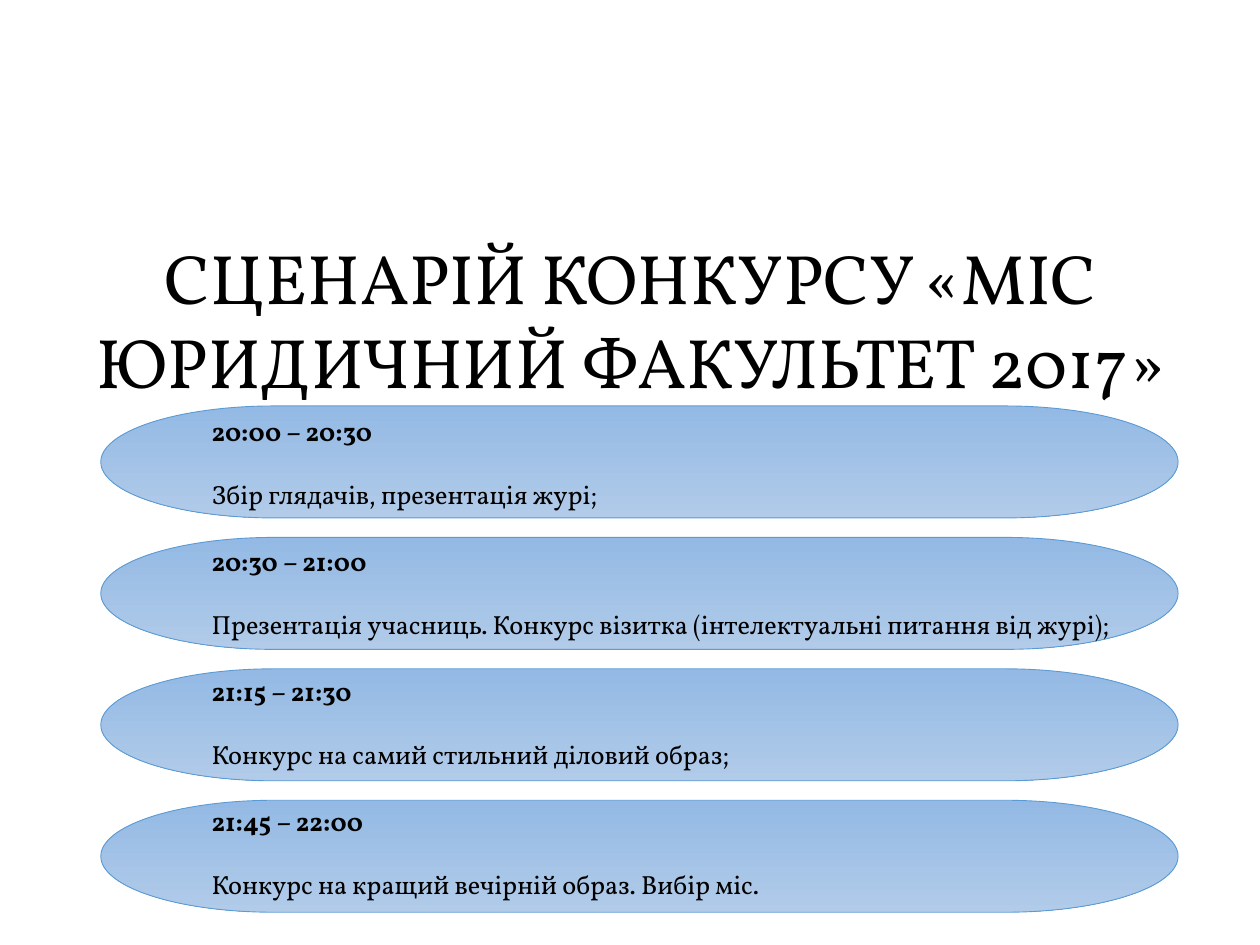
import pptx
import pptx.util
import pptx.dml.color
import pptx.enum.shapes
import pptx.enum.text

Pt = pptx.util.Pt
RGBColor = pptx.dml.color.RGBColor

# Content
TITLE = "СЦЕНАРІЙ КОНКУРСУ «МІС ЮРИДИЧНИЙ ФАКУЛЬТЕТ 2017»"
EVENTS = [
    ("20:00 – 20:30", "Збір глядачів, презентація журі;"),
    ("20:30 – 21:00", "Презентація учасниць. Конкурс візитка (інтелектуальні питання від журі);"),
    ("21:15 – 21:30", "Конкурс на самий стильний діловий образ;"),
    ("21:45 – 22:00", "Конкурс на кращий вечірній образ. Вибір міс."),
]

# Style
FONT = "Vollkorn"
BLACK = RGBColor(0x00, 0x00, 0x00)
BAND_TOP = RGBColor(0x93, 0xB9, 0xE4)
BAND_BOTTOM = RGBColor(0xB1, 0xCB, 0xE9)
BAND_LINE = RGBColor(0x5B, 0x9B, 0xD5)

# Layout in points: first top and step for bands and their captions
BAND_FIRST, BAND_STEP = 232, 75.1
CAPTION_FIRST, CAPTION_STEP = 233.6, 74.4


def style(paragraph, size, bold=False):
    paragraph.font.name = FONT
    paragraph.font.size = Pt(size)
    paragraph.font.bold = bold
    paragraph.font.color.rgb = BLACK


def add_text_box(slide, left, top, width, height):
    box = slide.shapes.add_textbox(Pt(left), Pt(top), Pt(width), Pt(height))
    box.text_frame.word_wrap = True
    box.text_frame.auto_size = pptx.enum.text.MSO_AUTO_SIZE.SHAPE_TO_FIT_TEXT
    return box.text_frame


def add_band(slide, top):
    band = slide.shapes.add_shape(
        pptx.enum.shapes.MSO_SHAPE.FLOWCHART_TERMINATOR,
        Pt(57.6), Pt(top), Pt(615.6), Pt(64))
    band.shadow.inherit = False
    band.fill.gradient()
    band.fill.gradient_angle = 270
    for stop, color in zip(band.fill.gradient_stops, (BAND_TOP, BAND_BOTTOM)):
        stop.color.rgb = color
    band.line.color.rgb = BAND_LINE
    band.line.width = Pt(0.5)


def add_caption(slide, top, time, event):
    frame = add_text_box(slide, 113.8, top, 560, 62)
    frame.text = time
    style(frame.paragraphs[0], 15, bold=True)
    paragraph = frame.add_paragraph()
    paragraph.text = event
    paragraph.space_before = Pt(18)
    style(paragraph, 15)


def main():
    presentation = pptx.Presentation()
    presentation.slide_width, presentation.slide_height = Pt(720), Pt(540)
    slide = presentation.slides.add_slide(presentation.slide_layouts[6])

    # Title
    frame = add_text_box(slide, 0.7, 131, 719.3, 102.2)
    frame.margin_left = frame.margin_right = Pt(5)
    frame.margin_top = frame.margin_bottom = Pt(2.9)
    frame.text = TITLE
    frame.paragraphs[0].alignment = pptx.enum.text.PP_ALIGN.CENTER
    style(frame.paragraphs[0], 40)

    # Schedule
    for row, (time, event) in enumerate(EVENTS):
        add_band(slide, BAND_FIRST + row * BAND_STEP)
        add_caption(slide, CAPTION_FIRST + row * CAPTION_STEP, time, event)

    presentation.save("out.pptx")


if __name__ == "__main__":
    main()
